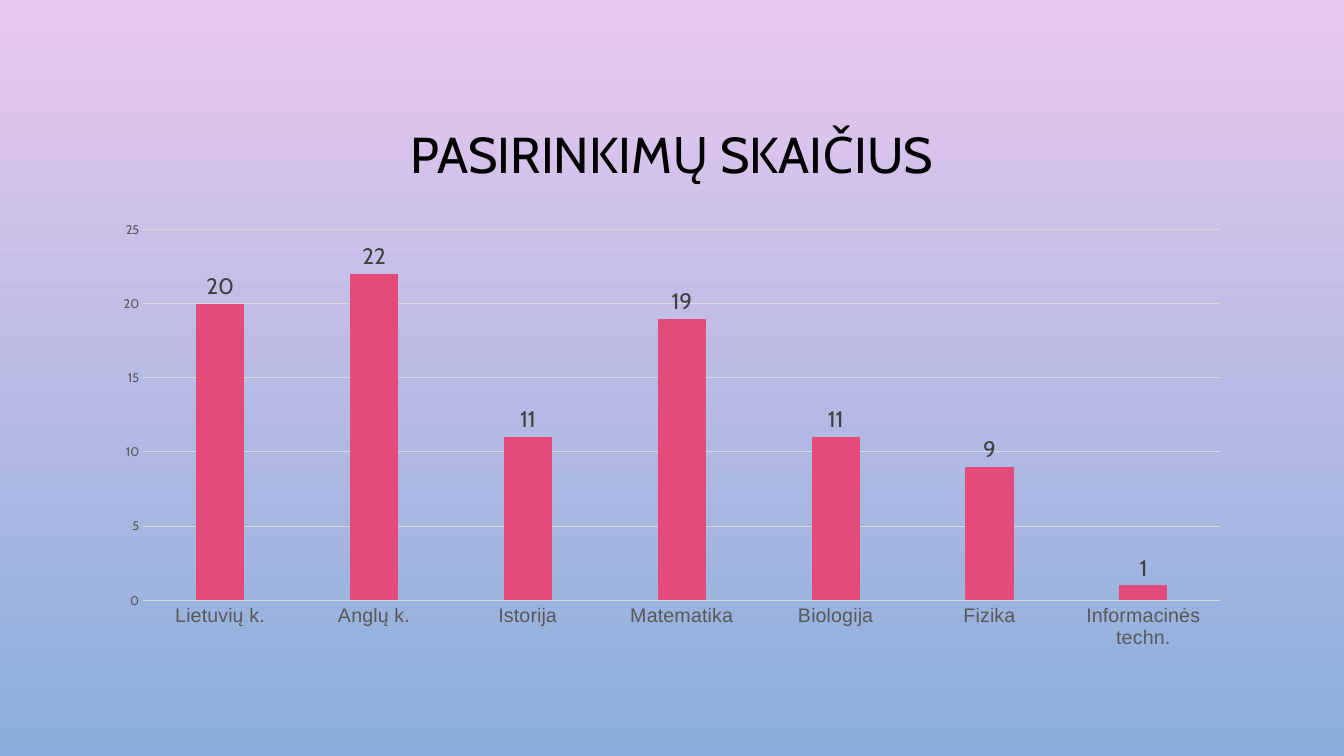
from dataclasses import dataclass
from typing import NamedTuple

from pptx import Presentation
from pptx.chart.axis import CategoryAxis, ValueAxis
from pptx.chart.data import CategoryChartData
from pptx.dml.color import RGBColor as Rgb
from pptx.enum.chart import XL_CHART_TYPE as ChartType
from pptx.enum.chart import XL_LABEL_POSITION as LabelPosition
from pptx.enum.chart import XL_TICK_MARK as TickMark
from pptx.enum.text import MSO_ANCHOR as Anchor
from pptx.enum.text import PP_ALIGN as Align
from pptx.slide import Slide
from pptx.text.text import Font
from pptx.util import Pt


@dataclass(frozen=True)
class TextStyle:
    face: str
    size: float
    color: str


@dataclass(frozen=True)
class Theme:
    sky_top: str = "E9C8EF"
    sky_bottom: str = "89AEDB"
    bar: str = "E34B7A"
    rule: str = "D9D9D9"
    rule_width: float = 0.75
    title: TextStyle = TextStyle("Cabin", 36, "000000")
    chart: TextStyle = TextStyle("Cabin", 10, "000000")
    subject: TextStyle = TextStyle("Arial", 14, "595959")
    scale: TextStyle = TextStyle("Cabin", 9, "595959")
    count: TextStyle = TextStyle("Cabin", 16, "404040")


class Box(NamedTuple):
    left: float
    top: float
    width: float
    height: float


class Choice(NamedTuple):
    subject: str
    count: int


THEME = Theme()
TITLE_BOX = Box(72, 49, 816, 126)
CHART_BOX = Box(72, 152, 816, 317.5)
CHOICES = [
    Choice("Lietuvių k.", 20),
    Choice("Anglų k.", 22),
    Choice("Istorija", 11),
    Choice("Matematika", 19),
    Choice("Biologija", 11),
    Choice("Fizika", 9),
    Choice("Informacinės techn.", 1),
]


def style_font(font: Font, style: TextStyle) -> None:
    font.name = style.face
    font.size = Pt(style.size)
    font.bold = False
    font.color.rgb = Rgb.from_string(style.color)


def paint_background(slide: Slide) -> None:
    fill = slide.background.fill
    fill.gradient()
    fill.gradient_angle = 270
    for stop, color in zip(fill.gradient_stops, (THEME.sky_top, THEME.sky_bottom)):
        stop.color.rgb = Rgb.from_string(color)


def add_title(slide: Slide, wording: str) -> None:
    frame = slide.shapes.add_textbox(*map(Pt, TITLE_BOX)).text_frame
    frame.word_wrap = True
    frame.vertical_anchor = Anchor.MIDDLE
    heading = frame.paragraphs[0]
    heading.text = wording
    heading.alignment = Align.CENTER
    heading.line_spacing = 0.9
    style_font(heading.font, THEME.title)


def style_axis(axis: CategoryAxis | ValueAxis, style: TextStyle) -> None:
    axis.major_tick_mark = axis.minor_tick_mark = TickMark.NONE
    style_font(axis.tick_labels.font, style)


def add_choice_chart(slide: Slide, choices: list[Choice]) -> None:
    data = CategoryChartData()
    data.categories = [choice.subject for choice in choices]
    data.add_series("Series 1", [choice.count for choice in choices])
    chart = slide.shapes.add_chart(
        ChartType.COLUMN_CLUSTERED, *map(Pt, CHART_BOX), data
    ).chart
    chart.has_legend = False
    chart.has_title = False
    style_font(chart.font, THEME.chart)

    subjects, scale = chart.category_axis, chart.value_axis
    style_axis(subjects, THEME.subject)
    style_axis(scale, THEME.scale)
    scale.minimum_scale, scale.maximum_scale, scale.major_unit = 0, 25, 5
    scale.format.line.fill.background()
    for rule in (subjects.format.line, scale.major_gridlines.format.line):
        rule.color.rgb = Rgb.from_string(THEME.rule)
        rule.width = Pt(THEME.rule_width)

    columns = chart.plots[0]
    columns.vary_by_categories = False
    columns.gap_width = 219
    columns.overlap = -27
    bars = columns.series[0]
    bars.format.fill.solid()
    bars.format.fill.fore_color.rgb = Rgb.from_string(THEME.bar)
    counts = bars.data_labels
    counts.show_value = True
    counts.position = LabelPosition.OUTSIDE_END
    style_font(counts.font, THEME.count)


def main() -> None:
    deck = Presentation()
    deck.slide_width, deck.slide_height = Pt(960), Pt(540)
    slide = deck.slides.add_slide(deck.slide_layouts[6])
    paint_background(slide)
    add_title(slide, "PASIRINKIMŲ SKAIČIUS")
    add_choice_chart(slide, CHOICES)
    deck.save("out.pptx")


if __name__ == "__main__":
    main()
